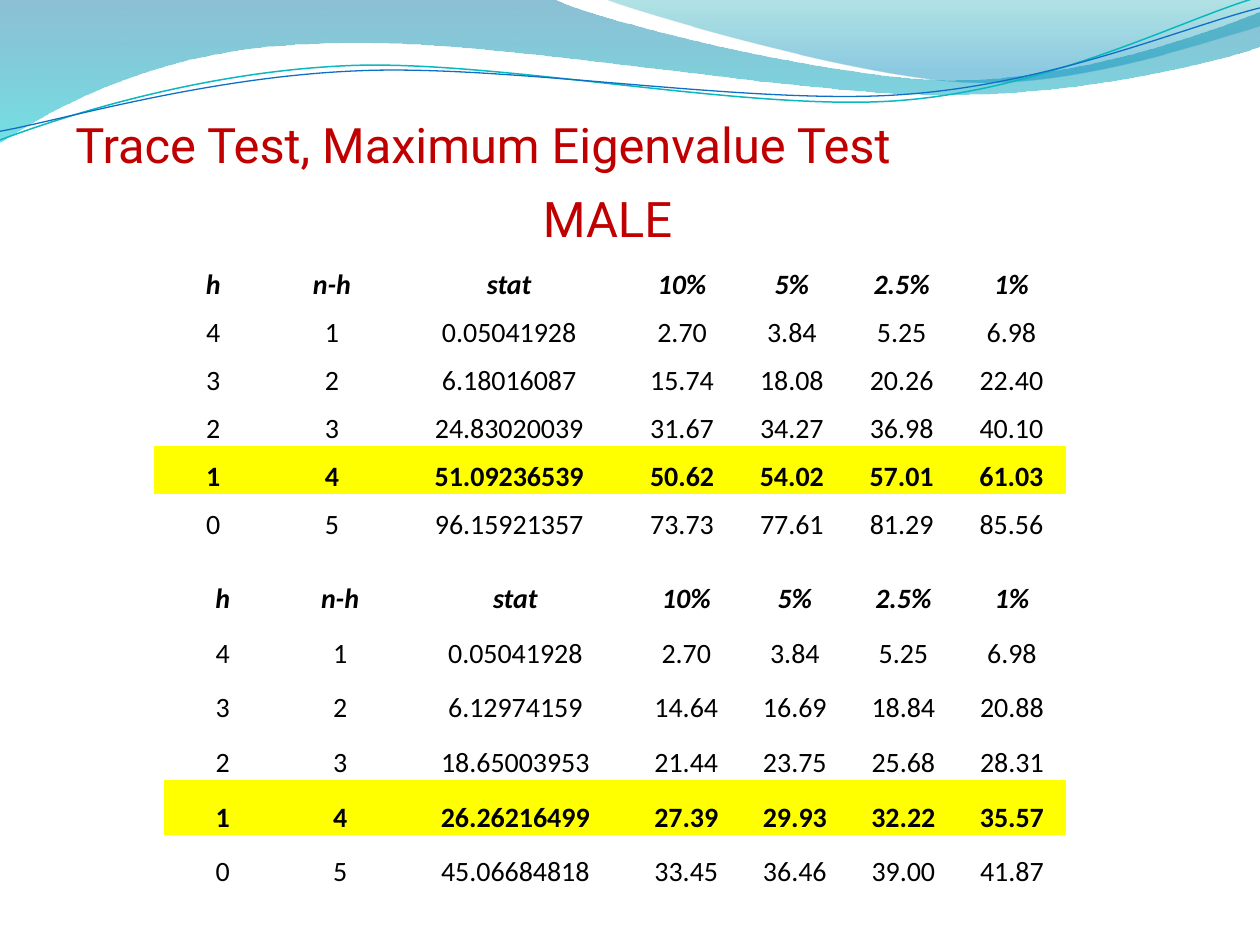
from lxml.etree import SubElement
from pptx import Presentation
from pptx.dml.color import RGBColor
from pptx.enum.text import MSO_ANCHOR as Anchor, MSO_AUTO_SIZE as AutoSize, PP_ALIGN as Align
from pptx.oxml.ns import qn
from pptx.util import Pt

TITLE = "Trace Test, Maximum Eigenvalue Test"
GROUP = "MALE"
RED, BLACK, YELLOW = "C00000", "000000", "FFFF00"
NO_GRID_STYLE = "{2D5ABB26-0587-4C30-8999-92F81FD0307C}"

HEADER = ("h", "n-h", "stat", "10%", "5%", "2.5%", "1%")
COL_WEIGHTS = (94, 94, 187, 87, 87, 87, 87)
HIGHLIGHT_ROW = 4

TRACE = [
    HEADER,
    ("4", "1", "0.05041928", "2.70", "3.84", "5.25", "6.98"),
    ("3", "2", "6.18016087", "15.74", "18.08", "20.26", "22.40"),
    ("2", "3", "24.83020039", "31.67", "34.27", "36.98", "40.10"),
    ("1", "4", "51.09236539", "50.62", "54.02", "57.01", "61.03"),
    ("0", "5", "96.15921357", "73.73", "77.61", "81.29", "85.56"),
]
MAX_EIGENVALUE = [
    HEADER,
    ("4", "1", "0.05041928", "2.70", "3.84", "5.25", "6.98"),
    ("3", "2", "6.12974159", "14.64", "16.69", "18.84", "20.88"),
    ("2", "3", "18.65003953", "21.44", "23.75", "25.68", "28.31"),
    ("1", "4", "26.26216499", "27.39", "29.93", "32.22", "35.57"),
    ("0", "5", "45.06684818", "33.45", "36.46", "39.00", "41.87"),
]
# rows, (left, top, width, height)
TABLES = [
    (TRACE, (88, 145.2, 521.4, 164.4)),
    (MAX_EIGENVALUE, (93.8, 321, 515.6, 187.2)),
]

# A path is a start point, then segments: one point is a line,
# three points are a Bezier curve (two controls and an end).
# path, gradient stops (position, colour, opacity in percent)
WAVES = [
    ([(0, 0), [(317, -0.5)],
      [(343, 12), (478, 45.5), (546, 45.5)],
      [(614, 45.5), (690, 18.5), (720, 6.5)],
      [(721, 26)],
      [(708, 31.5), (626, 54.5), (537, 54)],
      [(447.5, 54), (275, 20), (185, 24.5)],
      [(93, 26), (33, 60), (-0.5, 81.5)]],
     [(0, "0074A1", 45), (100, "00C6CF", 55)]),
    ([(345, -0.5),
      [(366.5, 8), (491, 44.5), (553.5, 47)],
      [(616.5, 49.5), (692, 23), (720, 15)],
      [(720, 0)]],
     [(0, "00A1A9", 30), (80, "008BBF", 45)]),
]
# path, colour, width
WAVE_LINES = [
    ([(0, 80),
      [(34.5, 67), (114, 41), (199.5, 37.5)],
      [(284.5, 34), (427, 64), (513.5, 57.5)],
      [(600, 51), (675.5, 11), (718.5, -1.5)]], "0AB8BF", 0.85),
    ([(0, 75),
      [(34, 69), (118, 44), (204, 40.5)],
      [(290, 36.5), (430, 60.5), (516, 54)],
      [(602, 48), (677.5, 15), (720, 4.5)]], "0F6FC6", 0.75),
]


def rgb(value):
    return RGBColor.from_string(value)


def add_path(s, path, close):
    """Draw all points as lines, then merge each triple into a Bezier curve."""
    start, *segments = path
    builder = s.shapes.build_freeform(*map(Pt, start))
    builder.add_line_segments([tuple(map(Pt, pt)) for seg in segments for pt in seg], close=close)
    sp = builder.convert_to_shape()
    lines = iter(list(sp.element.iter(qn("a:lnTo"))))
    for seg in segments:
        parts = [next(lines) for _ in seg]
        if len(parts) == 3:
            curve = parts[0].makeelement(qn("a:cubicBezTo"))
            parts[0].addprevious(curve)
            for part in parts:
                curve.append(part[0])
                part.getparent().remove(part)
    sp.shadow.inherit = False
    return sp


def add_wave(s, path, stops):
    sp = add_path(s, path, True)
    sp.line.fill.background()
    sp.fill.gradient()
    sp.fill.gradient_angle = 270
    for stop, (position, color, _) in zip(sp.fill.gradient_stops, stops):
        stop.position = position / 100
        stop.color.rgb = rgb(color)
    for clr, (_, _, opacity) in zip(sp.element.spPr.iter(qn("a:srgbClr")), stops):
        SubElement(clr, qn("a:alpha")).set("val", str(opacity * 1000))


def add_wave_line(s, path, color, width):
    sp = add_path(s, path, False)
    sp.fill.background()
    sp.line.color.rgb = rgb(color)
    sp.line.width = Pt(width)


def add_run(p, text, font, size, color, bold=False, italic=False):
    r = p.add_run()
    r.text = text
    r.font.name, r.font.size = font, Pt(size)
    r.font.bold, r.font.italic = bold, italic
    r.font.color.rgb = rgb(color)


def set_margins(box, left, top, right, bottom):
    box.margin_left, box.margin_top = Pt(left), Pt(top)
    box.margin_right, box.margin_bottom = Pt(right), Pt(bottom)


def add_stat_table(s, rows, box):
    _, _, width, height = box
    frame = s.shapes.add_table(len(rows), len(HEADER), *map(Pt, box))
    table = frame.table
    table.first_row = table.horz_banding = False
    frame.element.find(".//" + qn("a:tableStyleId")).text = NO_GRID_STYLE
    for col, weight in zip(table.columns, COL_WEIGHTS):
        col.width = Pt(width * weight / sum(COL_WEIGHTS))
    for i, values in enumerate(rows):
        table.rows[i].height = Pt(height / len(rows))
        for j, value in enumerate(values):
            cell = table.cell(i, j)
            set_margins(cell, 0.75, 0.75, 0.75, 0)
            cell.vertical_anchor = Anchor.BOTTOM
            if i == HIGHLIGHT_ROW:
                cell.fill.solid()
                cell.fill.fore_color.rgb = rgb(YELLOW)
            else:
                cell.fill.background()
            p = cell.text_frame.paragraphs[0]
            p.alignment = Align.CENTER
            add_run(p, value, "Calibri", 16, BLACK, i in (0, HIGHLIGHT_ROW), i == 0)


def place_title(title):
    title.left, title.top, title.width, title.height = map(Pt, (36.5, 54.7, 648, 44.6))
    tf = title.text_frame
    tf.auto_size = AutoSize.NONE
    tf.vertical_anchor = Anchor.BOTTOM
    set_margins(tf, 6.5, 3.6, 0, 0)
    p = tf.paragraphs[0]
    p.alignment = Align.LEFT
    add_run(p, TITLE, "Roboto", 27.9, RED)


def main():
    prs = Presentation()
    prs.slide_width, prs.slide_height = Pt(720), Pt(540)
    s = prs.slides.add_slide(prs.slide_layouts[5])
    title = s.shapes.title
    for wave in WAVES:
        add_wave(s, *wave)
    for line in WAVE_LINES:
        add_wave_line(s, *line)
    title.element.getparent().append(title.element)  # in front of the waves
    place_title(title)
    for rows, box in TABLES:
        add_stat_table(s, rows, box)
    tf = s.shapes.add_textbox(*map(Pt, (303.2, 104.4, 136, 41))).text_frame
    tf.word_wrap = True
    add_run(tf.paragraphs[0], GROUP, "Roboto", 28, RED)
    prs.save("out.pptx")


if __name__ == "__main__":
    main()
